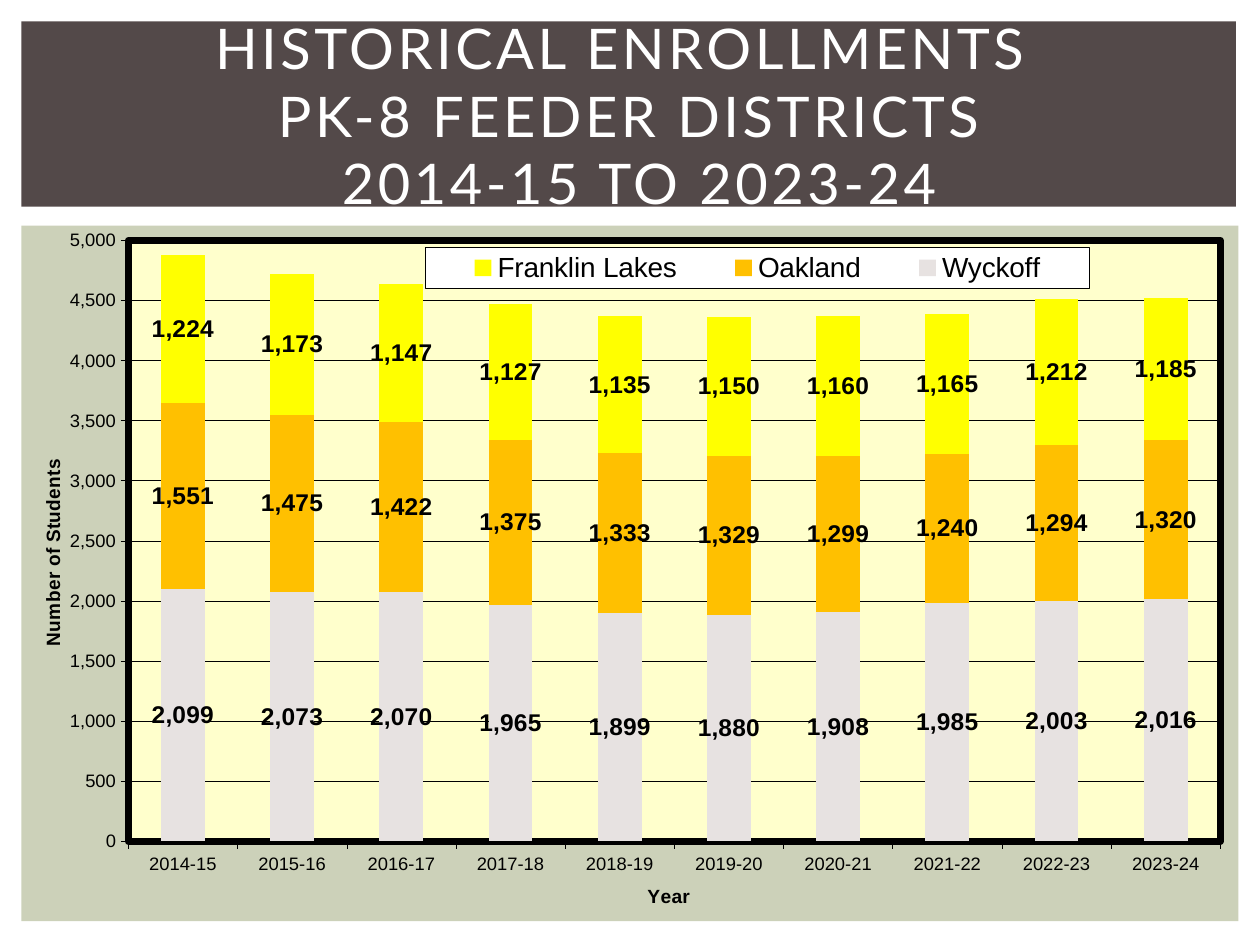
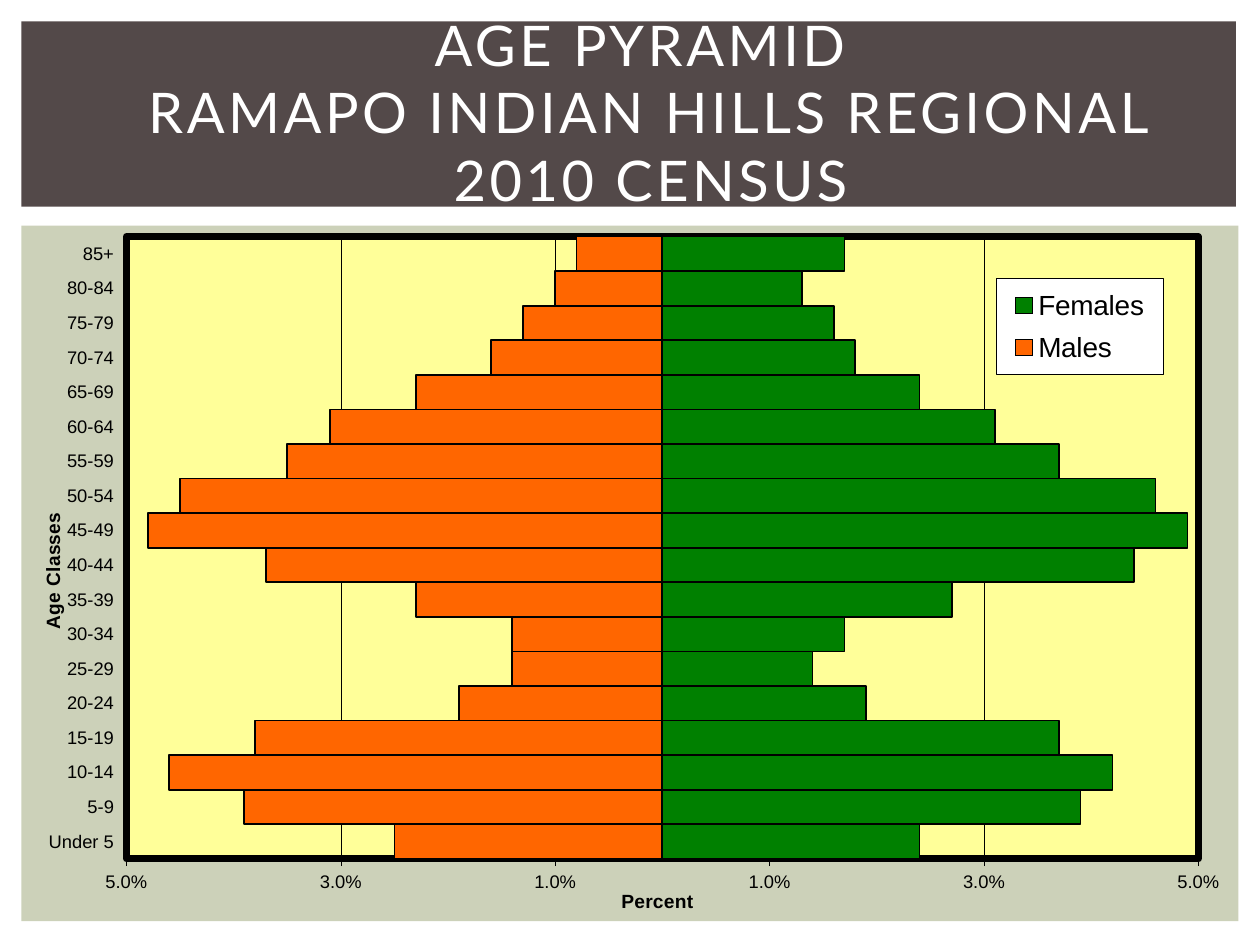
from lxml import etree
from pptx import Presentation
from pptx import util as u
from pptx.chart.data import CategoryChartData
from pptx.dml.color import RGBColor
from pptx.enum import chart as charts, shapes, text
from pptx.oxml import parse_xml
from pptx.oxml.ns import nsdecls, qn

BLACK, WHITE = "000000", "FFFFFF"
PANEL, BAND = "CCD1B9", "534949"
HAIRLINE = 0.25

YEARS = [f"{year}-{year - 1999}" for year in range(2014, 2024)]
ENROLLMENTS = [
    ("Wyckoff", "E7E2E1", [2099, 2073, 2070, 1965, 1899, 1880, 1908, 1985, 2003, 2016]),
    ("Oakland", "FFC000", [1551, 1475, 1422, 1375, 1333, 1329, 1299, 1240, 1294, 1320]),
    ("Franklin Lakes", "FFFF00", [1224, 1173, 1147, 1127, 1135, 1150, 1160, 1165, 1212, 1185]),
]

AGES = ["Under 5", *(f"{age}-{age + 4}" for age in range(5, 85, 5)), "85+"]
MALES = [2.5, 3.9, 4.6, 3.8, 1.9, 1.4, 1.4, 2.3, 3.7, 4.8, 4.5, 3.5, 3.1, 2.3, 1.6, 1.3, 1.0, 0.8]
FEMALES = [2.4, 3.9, 4.2, 3.7, 1.9, 1.4, 1.7, 2.7, 4.4, 4.9, 4.6, 3.7, 3.1, 2.4, 1.8, 1.6, 1.3, 1.7]
PYRAMID = [
    ("Males", "FF6600", [round(-percent / 100, 3) for percent in MALES]),
    ("Females", "008000", [round(percent / 100, 3) for percent in FEMALES]),
]


def rgb(color):
    """Turn a hex string into a colour."""
    return RGBColor.from_string(color)


def set_layout(element, x, y, width=None, height=None, inner=False):
    """Place a chart part by fractions of the chart's size."""
    for old in element.findall(qn("c:layout")):
        element.remove(old)
    layout = parse_xml(f"<c:layout {nsdecls('c')}><c:manualLayout/></c:layout>")
    values = {"layoutTarget": "inner" if inner else None, "xMode": "edge", "yMode": "edge",
              "x": x, "y": y, "w": width, "h": height}
    for name, value in values.items():
        if value is not None:
            etree.SubElement(layout[0], qn(f"c:{name}")).set("val", str(value))
    overlay = element.find(qn("c:overlay"))
    if overlay is None:
        element.insert(0, layout)
    else:
        overlay.addprevious(layout)


def set_box(element, fill, points):
    """Give a chart part a fill and a black outline."""
    box = parse_xml(
        f'<c:spPr {nsdecls("c", "a")}><a:solidFill><a:srgbClr val="{fill}"/></a:solidFill>'
        f'<a:ln w="{u.Pt(points)}"><a:solidFill><a:srgbClr val="{BLACK}"/></a:solidFill></a:ln></c:spPr>')
    overlay = element.find(qn("c:overlay"))
    if overlay is None:
        element.append(box)
    else:
        overlay.addnext(box)


class Deck:
    """Holds the shared style and the current slide."""

    def __init__(self):
        """Open a presentation with the slide size set."""
        self.presentation = Presentation()
        self.presentation.slide_width = u.Inches(10)
        self.presentation.slide_height = u.Inches(7.5)
        self.layout = self.presentation.slide_layouts.get_by_name("Title Only")
        self.slide = None

    def add_slide(self):
        """Start a slide, adding the shared bands before the first."""
        first = self.slide is None
        self.slide = self.presentation.slides.add_slide(self.layout)
        if first:
            self.add_band(PANEL, 0, 0.17, 1.79, 9.66, 5.52)
            self.add_band(BAND, 1, 0.17, 0.17, 9.64, 1.47)

    def add_band(self, color, order, *place):
        """Put a plain rectangle at the back of the layout."""
        shape = self.slide.shapes.add_shape(shapes.MSO_SHAPE.RECTANGLE, *map(u.Inches, place))
        shape.shadow.inherit = False
        shape.fill.solid()
        shape.fill.fore_color.rgb = rgb(color)
        shape.line.fill.background()
        shape.element.find(".//" + qn("p:cNvPr")).set("id", str(20 + order))
        self.layout.shapes.element.insert(2 + order, shape.element)

    def style_font(self, font, size, color=BLACK, name="Arial", bold=False):
        """Set the size, colour, face and weight of a font."""
        font.size, font.name, font.bold = u.Pt(size), name, bold
        font.color.rgb = rgb(color)

    def add_title(self, lines, *place):
        """Place the title and fill it line by line."""
        title = self.slide.shapes.title
        title.left, title.top, title.width, title.height = map(u.Inches, place)
        frame = title.text_frame
        frame.auto_size = text.MSO_AUTO_SIZE.NONE
        frame.word_wrap = True
        frame.vertical_anchor = text.MSO_ANCHOR.MIDDLE
        paragraph = frame.paragraphs[0]
        paragraph.alignment = text.PP_ALIGN.CENTER
        for index, line in enumerate(lines):
            if index:
                paragraph.add_line_break()
            run = paragraph.add_run()
            run.text = line
            self.style_font(run.font, 32, WHITE, "Lato")
            run.font.element.set("spc", "200") if hasattr(run.font, "element") else \
                run._r.get_or_add_rPr().set("spc", "200")

    def add_chart(self, kind, categories, rows, place, plot_fill, plot_place, legend_place,
                  gap, outline=None):
        """Add a bar chart with a framed plot and a boxed legend."""
        data = CategoryChartData()
        data.categories = categories
        for name, _, values in rows:
            data.add_series(name, values)
        chart = self.slide.shapes.add_chart(kind, *map(u.Inches, place), data).chart
        chart.has_title = False
        self.style_font(chart.font, 10)
        plot = chart.plots[0]
        plot.gap_width, plot.overlap, plot.vary_by_categories = gap, 100, False
        for series, (_, color, _) in zip(plot.series, rows):
            series.invert_if_negative = False
            series.format.fill.solid()
            series.format.fill.fore_color.rgb = rgb(color)
            if outline:
                series.format.line.color.rgb = rgb(BLACK)
                series.format.line.width = u.Pt(outline)
            else:
                series.format.line.fill.background()
        chart.has_legend = True
        chart.legend.position = charts.XL_LEGEND_POSITION.RIGHT
        chart.legend.include_in_layout = False
        self.style_font(chart.legend.font, 16)
        plot_area = chart.element.find(".//" + qn("c:plotArea"))
        legend = chart.element.find(".//" + qn("c:legend"))
        set_layout(plot_area, *plot_place, inner=True)
        set_box(plot_area, plot_fill, 4)
        set_layout(legend, *legend_place)
        set_box(legend, WHITE, HAIRLINE)
        return chart

    def style_axis(self, axis, caption, place, vertical=False, tick=charts.XL_TICK_MARK.OUTSIDE):
        """Give an axis its caption, ticks, line and font."""
        axis.major_tick_mark = tick
        axis.minor_tick_mark = charts.XL_TICK_MARK.NONE
        self.style_font(axis.tick_labels.font, 10.5)
        axis.format.line.color.rgb = rgb(BLACK)
        axis.format.line.width = u.Pt(HAIRLINE)
        run = axis.axis_title.text_frame.paragraphs[0].add_run()
        run.text = caption
        self.style_font(run.font, 11, bold=True)
        title = axis.axis_title.format and axis.axis_title.element
        title.find(".//" + qn("a:bodyPr")).set("rot", "-5400000" if vertical else "0")
        set_layout(title, *place)

    def scale_axis(self, axis, low, high, step, number_format):
        """Set the range, number format and gridlines of a value axis."""
        axis.minimum_scale, axis.maximum_scale, axis.major_unit = low, high, step
        axis.tick_labels.number_format = number_format
        axis.tick_labels.number_format_is_linked = False
        axis.has_major_gridlines = True
        axis.major_gridlines.format.line.color.rgb = rgb(BLACK)
        axis.major_gridlines.format.line.width = u.Pt(HAIRLINE)

    def add_labels(self, chart, number_format):
        """Show bold values in the middle of each bar."""
        for series in chart.plots[0].series:
            labels = series.data_labels
            labels.show_value = True
            labels.number_format = number_format
            labels.number_format_is_linked = False
            labels.position = charts.XL_LABEL_POSITION.CENTER
            self.style_font(labels.font, 14, bold=True)


def build_enrollments(deck):
    """Build the slide of stacked enrollments by year."""
    deck.add_slide()
    deck.add_title(["HISTORICAL ENROLLMENTS ", "PK-8 FEEDER DISTRICTS", " 2014-15 TO 2023-24"],
                   0.42, 0.15, 9.17, 1.52)
    chart = deck.add_chart(
        charts.XL_CHART_TYPE.COLUMN_STACKED, YEARS, ENROLLMENTS, (0.21, 1.8, 9.63, 5.45),
        "FFFFCC", (0.084, 0.02, 0.9, 0.886), (0.329, 0.03, 0.547, 0.061), gap=150)
    deck.style_axis(chart.category_axis, "Year", (0.509, 0.963))
    deck.style_axis(chart.value_axis, "Number of Students", (0.008, 0.34), vertical=True)
    deck.scale_axis(chart.value_axis, 0, 5000, 500, "#,##0")
    deck.add_labels(chart, "#,##0")


def build_pyramid(deck):
    """Build the slide of the age pyramid."""
    deck.add_slide()
    deck.add_title(["AGE PYRAMID ", "RAMAPO INDIAN HILLS REGIONAL", "2010 CENSUS"],
                   0.58, 0.16, 9.17, 1.45)
    chart = deck.add_chart(
        charts.XL_CHART_TYPE.BAR_CLUSTERED, AGES, PYRAMID, (0.2, 1.78, 9.56, 5.51),
        "FFFF99", (0.084, 0.018, 0.89, 0.906), (0.806, 0.079, 0.139, 0.14), gap=0, outline=1)
    deck.style_axis(chart.category_axis, "Age Classes", (0.009, 0.416), vertical=True,
                    tick=charts.XL_TICK_MARK.NONE)
    chart.category_axis.tick_label_position = charts.XL_TICK_LABEL_POSITION.LOW
    deck.style_axis(chart.value_axis, "Percent", (0.492, 0.962))
    deck.scale_axis(chart.value_axis, -0.05, 0.05, 0.02, "0.0%;0.0%")


def main():
    """Build both slides and save them."""
    deck = Deck()
    build_enrollments(deck)
    build_pyramid(deck)
    deck.presentation.save("out.pptx")


if __name__ == "__main__":
    main()
